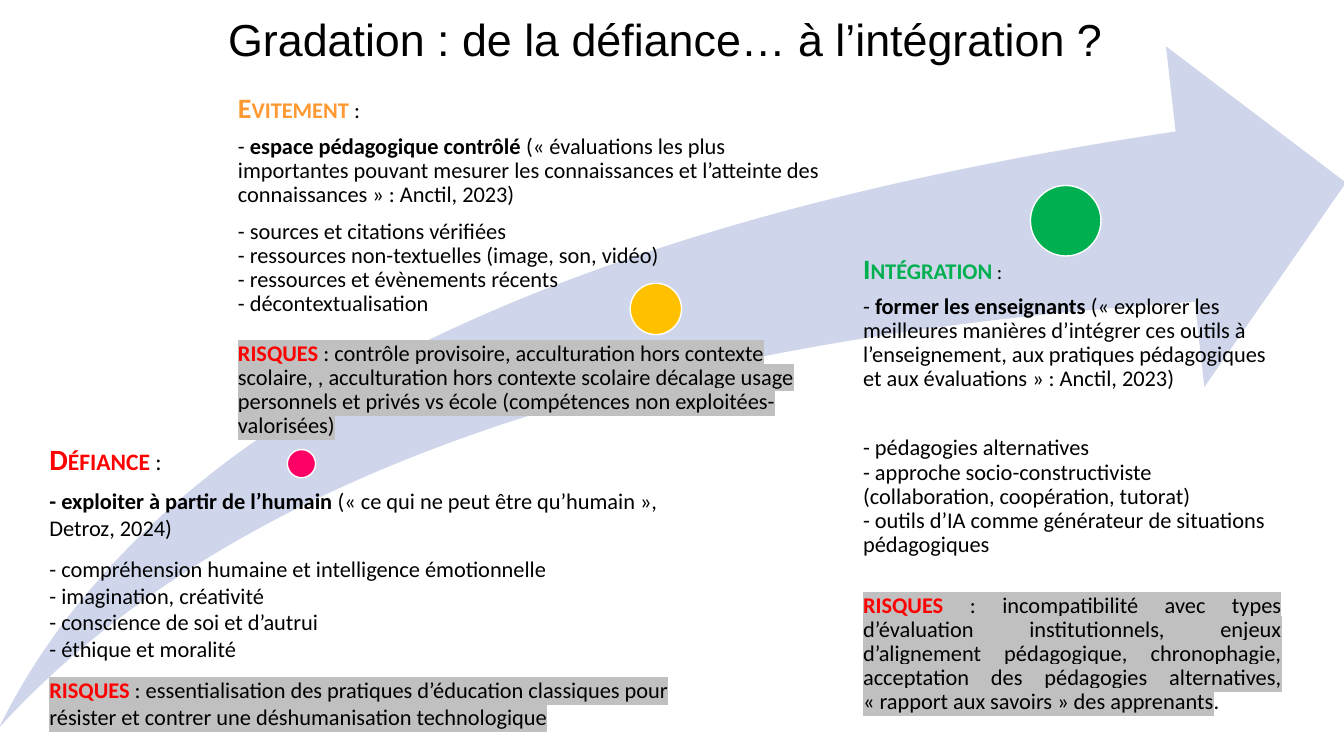
from lxml import etree
from pptx import Presentation
from pptx import util as u
from pptx.dml.color import RGBColor
from pptx.enum import shapes, text
from pptx.oxml.ns import qn

BLACK, WHITE, RED, GREY = "000000", "FFFFFF", "FF0000", "C0C0C0"
LEFT, JUSTIFY = text.PP_ALIGN.LEFT, text.PP_ALIGN.JUSTIFY


def colour(value):
    return RGBColor.from_string(value)


class Board:
    """Style and current slide; lengths are in grid cells, 75 rows to the slide height."""
    CELL = u.Inches(7.5) // 75
    TITLE_FONT, BODY_FONT = "Arial", "Calibri"
    BODY_SIZE = 16

    def __init__(self, presentation):
        layout = presentation.slide_layouts.get_by_name("Comparison")
        self.slide = presentation.slides.add_slide(layout)
        self.bodies = list(self.slide.placeholders)[1:]

    def place(self, shape, box):
        shape.left, shape.top, shape.width, shape.height = (
            round(cells * self.CELL) for cells in box)

    def title(self, box, wording):
        shape = self.slide.shapes.title
        self.place(shape, box)
        frame = shape.text_frame
        frame.auto_size = text.MSO_AUTO_SIZE.NONE
        frame.vertical_anchor = text.MSO_ANCHOR.MIDDLE
        paragraph = frame.paragraphs[0]
        paragraph.alignment = text.PP_ALIGN.CENTER
        paragraph.line_spacing = 0.9
        self.run(paragraph, wording, size=32, font=self.TITLE_FONT)

    def shape(self, kind, box, fill, line=None):
        shape = self.slide.shapes.add_shape(kind, 0, 0, 0, 0)
        self.place(shape, box)
        shape.shadow.inherit = False
        shape.fill.solid()
        shape.fill.fore_color.rgb = colour(fill)
        if line:
            shape.line.color.rgb = colour(line)
            shape.line.width = u.Pt(1)
        else:
            shape.line.fill.background()
        return shape

    def arrow(self, box, fill):
        """Rising arrow, behind everything else."""
        shape = self.shape(shapes.MSO_SHAPE.SWOOSH_ARROW, box, fill)
        shape.adjustments[0] = shape.adjustments[1] = 0.25
        self.slide.shapes._spTree.insert(2, shape._element)

    def circle(self, left, top, diameter, fill):
        self.shape(shapes.MSO_SHAPE.OVAL, (left, top, diameter, diameter), fill, WHITE)

    def run(self, paragraph, wording, size=BODY_SIZE, font=BODY_FONT, ink=BLACK,
            bold=False, small_caps=False, highlight=None):
        run = paragraph.add_run()
        run.text = wording
        run.font.size = u.Pt(size)
        run.font.bold = bold
        run.font.color.rgb = colour(ink)
        properties = run._r.get_or_add_rPr()
        if small_caps:
            properties.set("cap", "small")
        if highlight:
            mark = etree.Element(qn("a:highlight"))
            etree.SubElement(mark, qn("a:srgbClr")).set("val", highlight)
            properties.find(qn("a:solidFill")).addnext(mark)
        run.font.name = font

    def stage(self, box, inset, spacing, paragraphs):
        """Fill the next body placeholder; paragraphs hold (runs, points after, alignment)."""
        shape = self.bodies.pop(0)
        self.place(shape, box)
        frame = shape.text_frame
        frame.word_wrap = True
        frame.auto_size = text.MSO_AUTO_SIZE.NONE
        frame.vertical_anchor = text.MSO_ANCHOR.TOP
        frame.margin_left = round(inset * self.CELL)
        frame.margin_top = frame.margin_right = frame.margin_bottom = 0
        for number, (runs, after, alignment) in enumerate(paragraphs):
            paragraph = frame.add_paragraph() if number else frame.paragraphs[0]
            properties = paragraph._p.get_or_add_pPr()
            properties.set("marL", "0")
            properties.set("indent", "0")
            etree.SubElement(properties, qn("a:buNone"))
            paragraph.alignment = alignment
            paragraph.line_spacing = spacing if number else 0.9
            paragraph.space_before = u.Pt(0)
            paragraph.space_after = u.Pt(after)
            for wording, style in runs:
                self.run(paragraph, wording, **style)

    def remove_unused(self):
        for shape in self.bodies:
            shape._element.getparent().remove(shape._element)


def heading(name, ink, size, colon=":", colon_size=None):
    return [(name, dict(size=size, ink=ink, bold=True, small_caps=True)),
            (colon, dict(size=colon_size or size, small_caps=True))], 7, LEFT


def key_idea(dash, idea, quote, after, bold_dash=False):
    return [(dash, dict(bold=bold_dash)), (idea, dict(bold=True)), (quote, {})], after, LEFT


def items(wordings, after):
    """Dash items, with the gap only below the last one."""
    return [([(f"- {wording}", {})], after if wording == wordings[-1] else 0, LEFT)
            for wording in wordings]


def risks(wording, ending="", alignment=LEFT):
    runs = [("RISQUES", dict(ink=RED, bold=True, highlight=GREY)),
            (f" : {wording}", dict(highlight=GREY))]
    return runs + ([(ending, {})] if ending else []), 0, alignment


def main():
    presentation = Presentation()
    presentation.slide_width, presentation.slide_height = u.Inches(13.33), u.Inches(7.5)
    board = Board(presentation)
    board.title((1.7, 0, 129.9, 8.4), "Gradation : de la défiance… à l’intégration ? ")
    board.arrow((-0.1, 4.6, 133.6, 67.6), "CFD5EA")
    board.circle(28.5, 44.6, 2.8, "FF0066")
    board.circle(62.5, 28.1, 5.1, "FFC000")
    board.circle(102.2, 18.4, 7, "00B050")

    board.stage((3.4, 44.2, 67, 30.8), 1.5, 1.0, [
        heading("Défiance ", RED, 21),
        key_idea("- ", "exploiter à partir de l’humain ",
                 "(«\u00a0ce qui ne peut être qu’humain\u00a0», Detroz, 2024)", 10, True),
        *items(["compréhension humaine et intelligence émotionnelle",
                "imagination, créativité",
                "conscience de soi et d’autrui",
                "éthique et moralité"], 10),
        risks("essentialisation des pratiques d’éducation classiques pour résister "
              "et contrer une déshumanisation technologique"),
    ])
    board.stage((20.9, 9.4, 61.5, 35.2), 2.7, 0.9, [
        heading("Evitement ", "FF9933", 20),
        key_idea("- ", "espace pédagogique contrôlé ",
                 "(«\u00a0évaluations les plus importantes pouvant mesurer les connaissances "
                 "et l’atteinte des connaissances\u00a0» : Anctil, 2023)", 9),
        *items(["sources et citations vérifiées",
                "ressources non-textuelles (image, son, vidéo)",
                "ressources et évènements récents",
                "décontextualisation"], 18),
        risks("contrôle provisoire, acculturation hors contexte scolaire, , acculturation "
              "hors contexte scolaire décalage usage personnels et privés vs école "
              "(compétences non exploitées-valorisées)"),
    ])
    board.stage((81.9, 25.3, 45.2, 47.6), 3.7, 0.9, [
        heading("Intégration", "00B050", 20, " :", 18),
        key_idea("- ", "former les enseignants ",
                 "(«\u00a0explorer les meilleures manières d’intégrer ces outils à "
                 "l’enseignement, aux pratiques pédagogiques et aux évaluations » : "
                 "Anctil, 2023)", 32),
        *items(["pédagogies alternatives",
                "approche socio-constructiviste (collaboration, coopération, tutorat)",
                "outils d’IA comme générateur de situations pédagogiques"], 26),
        risks("incompatibilité avec types d’évaluation institutionnels, enjeux d’alignement "
              "pédagogique, chronophagie, acceptation des pédagogies alternatives, "
              "«\u00a0rapport aux savoirs\u00a0» des apprenants", ".", JUSTIFY),
    ])
    board.remove_unused()
    presentation.save("out.pptx")


if __name__ == "__main__":
    main()
